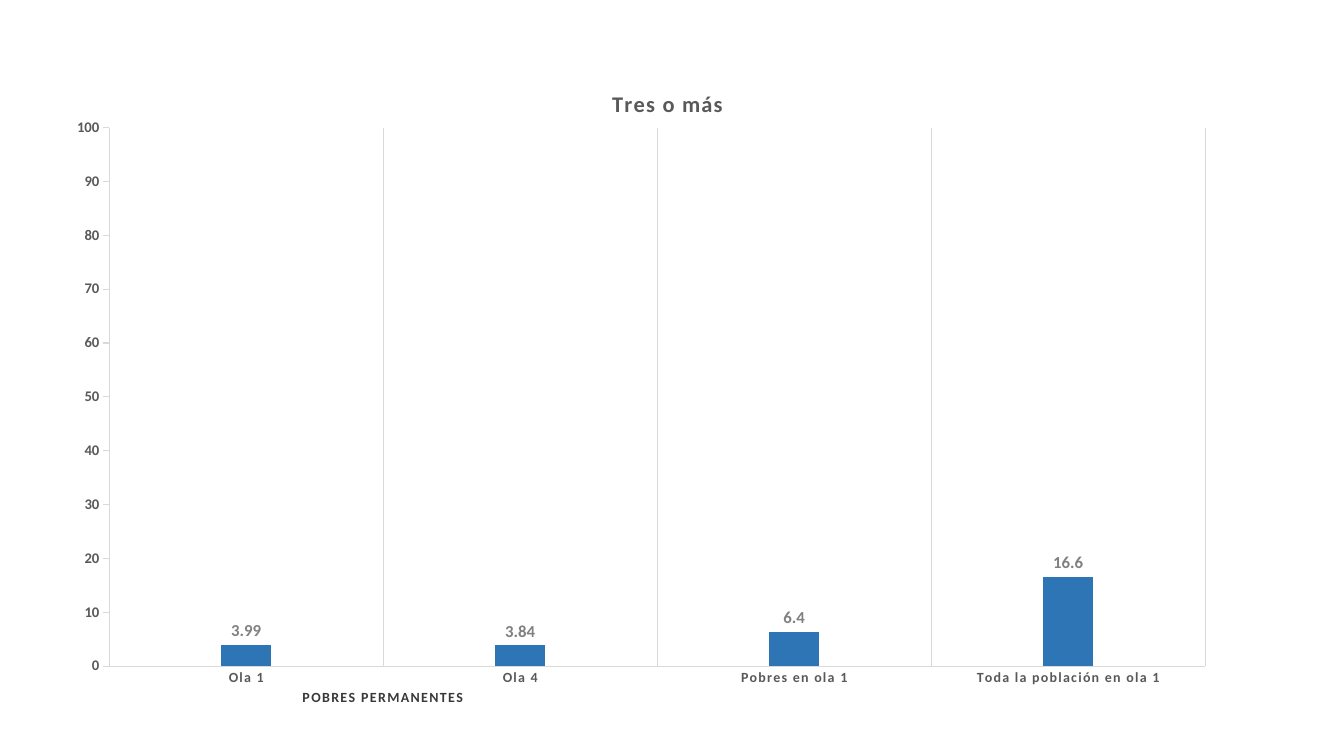
"""Build a slide with a column chart of four groups and a caption below it."""
from pptx import Presentation
from pptx.chart.data import CategoryChartData
from pptx.dml.color import RGBColor
from pptx.enum.chart import XL_CHART_TYPE as ChartType, XL_LABEL_POSITION as LabelPosition, XL_TICK_MARK as TickMark
from pptx.oxml import parse_xml
from pptx.oxml.ns import nsdecls, qn
from pptx.util import Pt


def set_font(font, size, color, spacing=None):
    font.name, font.size, font.bold = "Calibri", Pt(size), True
    font.color.rgb = RGBColor.from_string(color)
    if spacing:
        font._element.set("spc", str(spacing))


def set_line(line, color):
    line.color.rgb = RGBColor.from_string(color)
    line.width = Pt(0.75)


deck = Presentation()
deck.slide_width, deck.slide_height = Pt(960), Pt(540)
page = deck.slides.add_slide(deck.slide_layouts[6])

data = CategoryChartData()
data.categories = ["Ola 1", "Ola 4", "Pobres en ola 1", "Toda la población en ola 1"]
data.add_series("Tres o más", [3.99, 3.84, 6.4, 16.6])
chart = page.shapes.add_chart(
    ChartType.COLUMN_CLUSTERED, Pt(49), Pt(47.5), Pt(855.5), Pt(450), data
).chart
chart.font.name, chart.font.size = "Calibri", Pt(10)
chart.has_legend = False

chart.has_title = True
title = chart.chart_title.text_frame.paragraphs[0]
title.add_run().text = "Tres o más"
set_font(title.runs[0].font, 16, "595959", 100)
chart.chart_title.include_in_layout = False

plot = chart.plots[0]
plot.gap_width, plot.overlap = 444, -90
plot.vary_by_categories = False
bars = plot.series[0]
bars.format.fill.solid()
bars.format.fill.fore_color.rgb = RGBColor.from_string("2E75B6")
labels = bars.data_labels
labels.show_value = True
labels.position = LabelPosition.OUTSIDE_END
set_font(labels.font, 12, "808080")

groups, percent = chart.category_axis, chart.value_axis
for axis, size, spacing, tick in (
    (groups, 10, 100, TickMark.NONE),
    (percent, 10.5, None, TickMark.OUTSIDE),
):
    set_font(axis.tick_labels.font, size, "595959", spacing)
    set_line(axis.format.line, "D9D9D9")
    axis.major_tick_mark, axis.minor_tick_mark = tick, TickMark.NONE
groups.has_major_gridlines = True
set_line(groups.major_gridlines.format.line, "D9D9D9")
percent.has_major_gridlines = False
percent.minimum_scale, percent.maximum_scale, percent.major_unit = 0, 100, 10

plot_area = chart._chartSpace.chart.plotArea
for old_layout in plot_area.findall(qn("c:layout")):
    plot_area.remove(old_layout)
plot_area.insert(0, parse_xml(
    f'<c:layout {nsdecls("c")}><c:manualLayout><c:layoutTarget val="inner"/>'
    '<c:xMode val="edge"/><c:yMode val="edge"/><c:x val="0.034"/><c:y val="0.097"/>'
    '<c:w val="0.915"/><c:h val="0.855"/></c:manualLayout></c:layout>'
))

box = page.shapes.add_textbox(Pt(209), Pt(488), Pt(360), Pt(38))
box.text_frame.word_wrap = True
para = box.text_frame.paragraphs[0]
span = para.add_run()
span.text = "POBRES PERMANENTES"
set_font(span.font, 10, "3B3838", 100)

deck.save("out.pptx")
